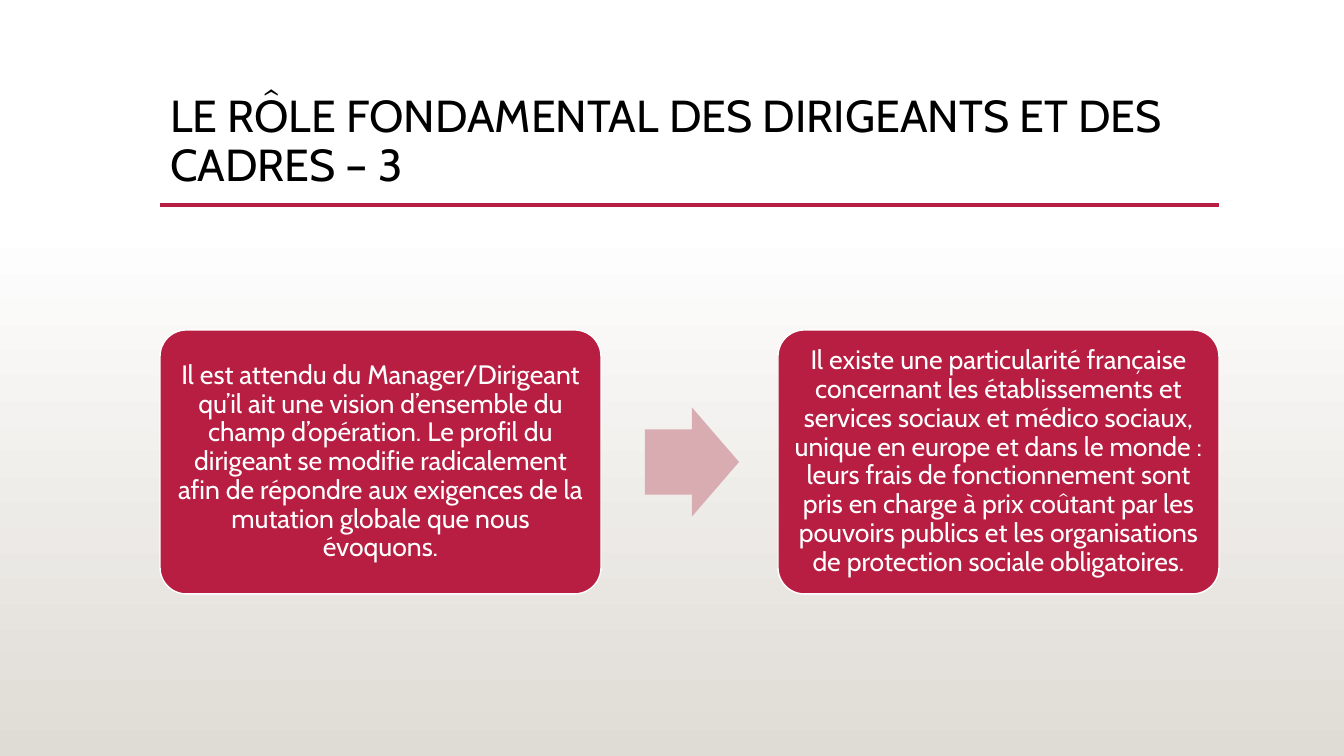
from lxml.etree import SubElement
from pptx import Presentation
from pptx.dml.color import RGBColor
from pptx.enum.shapes import MSO_CONNECTOR, MSO_SHAPE
from pptx.enum.text import MSO_ANCHOR, PP_ALIGN
from pptx.oxml.ns import qn
from pptx.util import Emu, Pt

BLACK = RGBColor(0x00, 0x00, 0x00)
WHITE = RGBColor(0xFF, 0xFF, 0xFF)
CRIMSON = RGBColor(0xB7, 0x1E, 0x42)
ROSE = RGBColor(0xD8, 0xAC, 0xB0)
SAND = RGBColor(0xDF, 0xDB, 0xD5)

FONT = "Cabin"
SLIDE_WIDTH, SLIDE_HEIGHT = 1344, 756
LEFT, RIGHT = 160, 1219
RULE_TOP = 205
BACKDROP_TOP = 223
CARD_TOP, CARD_WIDTH, CARD_HEIGHT = 330, 441, 264
ARROW_WIDTH, ARROW_HEIGHT = 94, 109

TITLE = "LE RÔLE FONDAMENTAL DES DIRIGEANTS ET DES CADRES – 3"
CARDS = [
    "Il est attendu du Manager/Dirigeant qu’il ait une vision d’ensemble du "
    "champ d’opération. Le profil du dirigeant se modifie radicalement afin de "
    "répondre aux exigences de la mutation globale que nous évoquons.",
    "Il existe une particularité française concernant les établissements et "
    "services sociaux et médico sociaux, unique en europe et dans le monde : "
    "leurs frais de fonctionnement sont pris en charge à prix coûtant par les "
    "pouvoirs publics et les organisations de protection sociale obligatoires.",
]


def px(count):
    return Emu(round(count * 914400 / 100.8))


def write_text(shape, text, size, color, align, anchor, margins):
    frame = shape.text_frame
    frame.word_wrap = True
    frame.vertical_anchor = anchor
    frame.margin_left = frame.margin_right = px(margins[0])
    frame.margin_top = frame.margin_bottom = px(margins[1])
    para = frame.paragraphs[0]
    para.alignment = align
    para.line_spacing = 0.9
    para.space_before = Pt(0)
    span = para.add_run()
    span.text = text
    span.font.name = FONT
    span.font.size = Pt(size)
    span.font.color.rgb = color


def add_preset(page, preset, left, top, width, height):
    shape = page.shapes.add_shape(preset, px(left), px(top), px(width), px(height))
    shape.shadow.inherit = False
    shape.line.fill.background()
    return shape


def add_backdrop(page):
    backdrop = add_preset(page, MSO_SHAPE.RECTANGLE, 0, BACKDROP_TOP,
                          SLIDE_WIDTH, SLIDE_HEIGHT - BACKDROP_TOP)
    backdrop.fill.gradient()
    backdrop.fill.gradient_angle = 270
    for stop, color, position in zip(backdrop.fill.gradient_stops, (WHITE, SAND), (0, 1)):
        stop.color.rgb = color
        stop.position = position


def set_title(page):
    title = page.shapes.title
    title.left, title.top = px(LEFT), px(89)
    title.width, title.height = px(RIGHT - LEFT), px(116)
    write_text(title, TITLE, 32, BLACK, PP_ALIGN.LEFT, MSO_ANCHOR.TOP, (10, 5))


def add_rule(page):
    rule = page.shapes.add_connector(
        MSO_CONNECTOR.STRAIGHT, px(LEFT), px(RULE_TOP), px(RIGHT), px(RULE_TOP))
    rule.line.color.rgb = CRIMSON
    rule.line.width = Pt(2.5)
    SubElement(rule._element.spPr, qn("a:effectLst"))


def add_card(page, left, text):
    card = add_preset(page, MSO_SHAPE.ROUNDED_RECTANGLE, left, CARD_TOP,
                      CARD_WIDTH, CARD_HEIGHT)
    card.adjustments[0] = 0.1
    card.fill.solid()
    card.fill.fore_color.rgb = CRIMSON
    card.line.color.rgb = WHITE
    card.line.width = Pt(1)
    write_text(card, text, 19, WHITE, PP_ALIGN.CENTER, MSO_ANCHOR.MIDDLE, (8, 8))


def add_arrow(page):
    arrow = add_preset(page, MSO_SHAPE.RIGHT_ARROW, 645,
                       CARD_TOP + (CARD_HEIGHT - ARROW_HEIGHT) / 2,
                       ARROW_WIDTH, ARROW_HEIGHT)
    arrow.adjustments[0] = 0.6
    arrow.adjustments[1] = 0.5
    arrow.fill.solid()
    arrow.fill.fore_color.rgb = ROSE


def main():
    deck = Presentation()
    deck.slide_width, deck.slide_height = px(SLIDE_WIDTH), px(SLIDE_HEIGHT)
    page = deck.slides.add_slide(deck.slide_layouts[5])
    add_backdrop(page)
    set_title(page)
    add_rule(page)
    for left, text in zip((LEFT, RIGHT - CARD_WIDTH), CARDS):
        add_card(page, left, text)
    add_arrow(page)
    deck.save("out.pptx")


if __name__ == "__main__":
    main()
